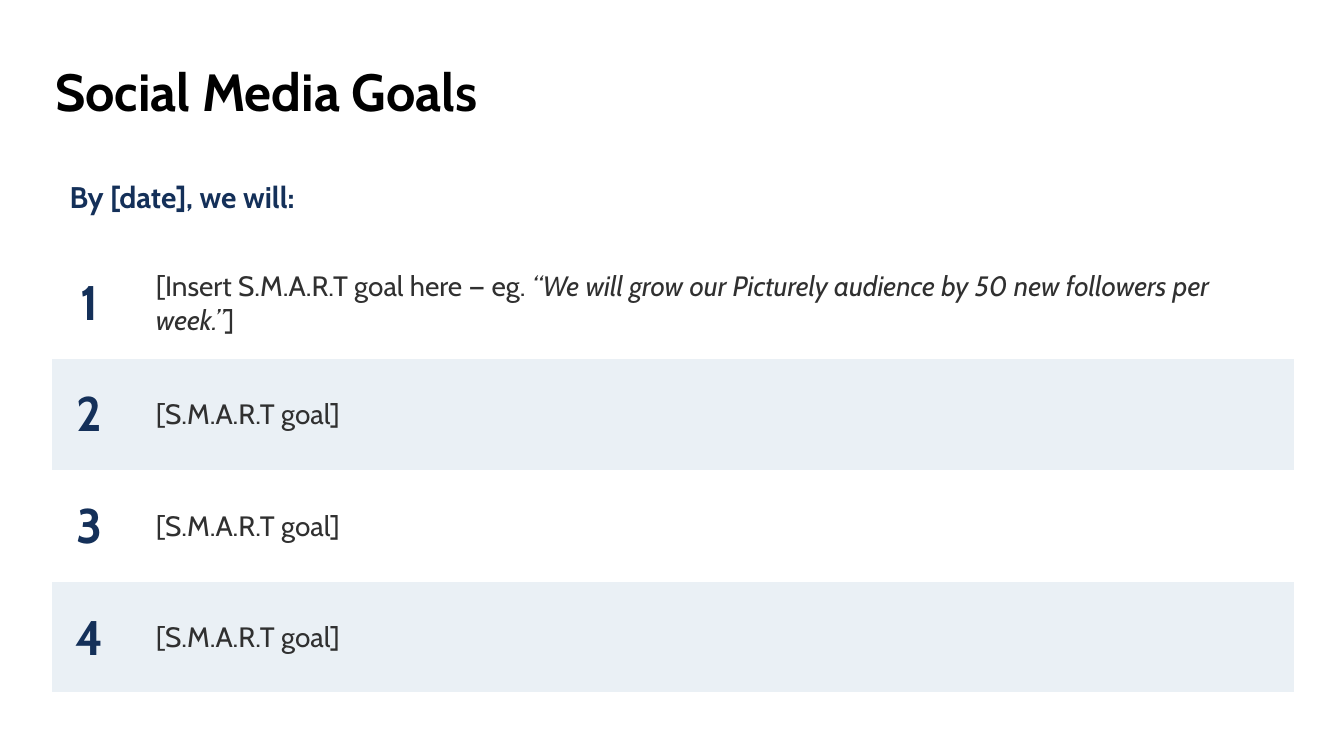
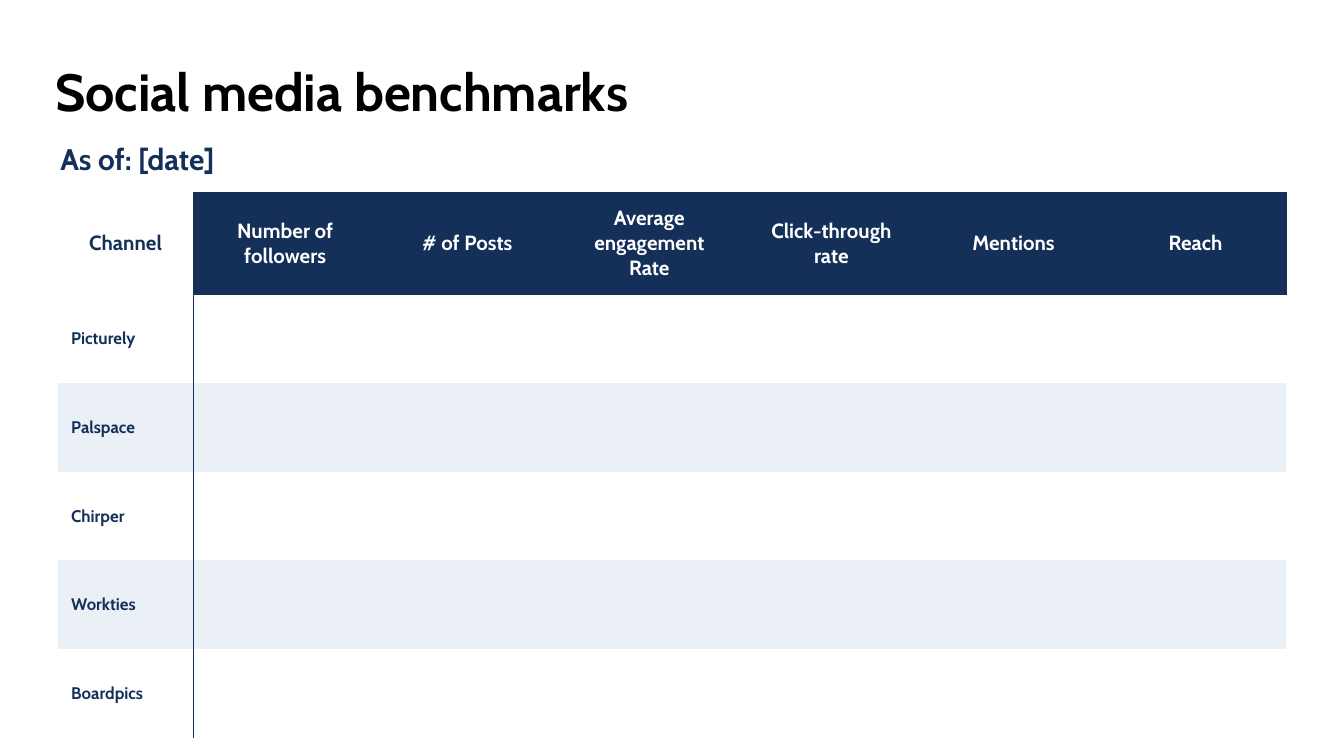
"""Build the social media goals and benchmarks slides."""
from dataclasses import dataclass

from lxml.etree import SubElement
from pptx import Presentation
from pptx.dml.color import RGBColor
from pptx.enum.shapes import MSO_SHAPE
from pptx.enum.text import MSO_ANCHOR, MSO_AUTO_SIZE, PP_ALIGN
from pptx.oxml.ns import qn
from pptx.presentation import Presentation as Deck
from pptx.slide import Slide
from pptx.text.text import TextFrame
from pptx.util import Inches, Pt

NAVY = RGBColor(0x14, 0x30, 0x59)
CHARCOAL = RGBColor(0x30, 0x30, 0x30)
BLACK = RGBColor(0, 0, 0)
WHITE = RGBColor(0xFF, 0xFF, 0xFF)
BAND = RGBColor(0xEA, 0xF0, 0xF5)

FONT = "Cabin"
INSET = 0.1
PLAIN_TABLE_STYLE = "{2D5ABB26-0587-4C30-8999-92F81FD0307C}"
TITLE_ONLY_LAYOUT = 5

GOALS = [
    [("[Insert S.M.A.R.T goal here — eg. ", False),
     ("“We will grow our Picturely audience by 50 new followers per week.”", True),
     ("]", False)],
    *[[("[S.M.A.R.T goal]", False)]] * 3,
]
METRICS = ["Number of followers", "# of Posts", "Average engagement Rate",
           "Click-through rate", "Mentions", "Reach"]
CHANNELS = ["Picturely", "Palspace", "Chirper", "Workties", "Boardpics"]


@dataclass(frozen=True)
class TextStyle:
    """Look of one kind of text."""
    size: float
    color: RGBColor
    bold: bool = True
    align: PP_ALIGN = PP_ALIGN.LEFT
    spacing: float = 1.0
    left_inset: float = INSET


@dataclass(frozen=True)
class CellContent:
    """Runs, look, fill and bordered sides of one table cell."""
    runs: list[tuple[str, bool]]
    style: TextStyle
    fill: RGBColor | None = None
    sides: str = ""


@dataclass(frozen=True)
class Grid:
    """Place, sizes and border of one table."""
    left: float
    top: float
    columns: list[float]
    rows: list[float]
    border_color: RGBColor
    border_width: float


TITLE = TextStyle(28, BLACK, spacing=0.9, left_inset=0.06)
SUBTITLE = TextStyle(16, NAVY, spacing=1.2)
GOAL_NUMBER = TextStyle(26, NAVY, align=PP_ALIGN.CENTER)
GOAL_TEXT = TextStyle(15, CHARCOAL, bold=False, left_inset=0.2)
CORNER = TextStyle(11, NAVY, align=PP_ALIGN.CENTER)
METRIC = TextStyle(11, WHITE, align=PP_ALIGN.CENTER, left_inset=0.11)
CHANNEL = TextStyle(9, NAVY)

CHANNEL_WIDTH = 1.01
METRIC_WIDTH = (9.14 - CHANNEL_WIDTH) / len(METRICS)
GOAL_GRID = Grid(0.37, 1.84, [0.59, 8.68], [0.83] * len(GOALS), WHITE, 2.25)
BENCHMARK_GRID = Grid(0.43, 1.43, [CHANNEL_WIDTH] + [METRIC_WIDTH] * len(METRICS),
                      [0.56] + [0.66] * len(CHANNELS), NAVY, 0.75)


def set_attributes(target: object, values: dict) -> None:
    """Apply each format value to the target."""
    for attribute, value in values.items():
        setattr(target, attribute, value)


def margins(style: TextStyle) -> dict:
    """Return the four insets that a style asks for."""
    return {"margin_left": Inches(style.left_inset), "margin_top": Inches(INSET),
            "margin_right": Inches(INSET), "margin_bottom": Inches(INSET)}


def write_runs(frame: TextFrame, runs: list[tuple[str, bool]], style: TextStyle) -> None:
    """Write runs with optional italics into the first paragraph."""
    line = frame.paragraphs[0]
    set_attributes(line, {"alignment": style.align, "line_spacing": style.spacing})
    for wording, italic in runs:
        run = line.add_run()
        run.text = wording
        set_attributes(run.font, {"name": FONT, "size": Pt(style.size),
                                  "bold": style.bold, "italic": italic})
        run.font.color.rgb = style.color


def write_box(frame: TextFrame, wording: str, style: TextStyle) -> None:
    """Fill a free-standing text frame with one line."""
    set_attributes(frame, {**margins(style), "word_wrap": True,
                           "auto_size": MSO_AUTO_SIZE.NONE,
                           "vertical_anchor": MSO_ANCHOR.TOP})
    write_runs(frame, [(wording, False)], style)


def add_titled_slide(deck: Deck, heading: str) -> Slide:
    """Add a slide with the shared title."""
    slide = deck.slides.add_slide(deck.slide_layouts[TITLE_ONLY_LAYOUT])
    title = slide.shapes.title
    set_attributes(title, {"left": Inches(0.35), "top": Inches(0.39),
                           "width": Inches(8.35), "height": Inches(0.59)})
    write_box(title.text_frame, heading, TITLE)
    return slide


def add_subtitle(slide: Slide, wording: str, left: float, top: float) -> None:
    """Add the dated line on its translucent white strip."""
    strip = slide.shapes.add_shape(MSO_SHAPE.RECTANGLE, Inches(left), Inches(top),
                                   Inches(9.09), Inches(0.53))
    strip.shadow.inherit = False
    strip.line.fill.background()
    strip.fill.solid()
    strip.fill.fore_color.rgb = WHITE
    white = next(strip.element.spPr.iter(qn("a:srgbClr")))
    SubElement(white, qn("a:alpha"), val="49000")
    write_box(strip.text_frame, wording, SUBTITLE)


def add_borders(properties, sides: str, grid: Grid) -> None:
    """Put drawn or empty edges ahead of the fill in the cell properties."""
    for position, side in enumerate("LRTB"):
        edge = SubElement(properties, qn(f"a:ln{side}"),
                          w=str(Pt(grid.border_width)))
        if side in sides:
            paint = SubElement(edge, qn("a:solidFill"))
            SubElement(paint, qn("a:srgbClr"), val=str(grid.border_color))
        else:
            SubElement(edge, qn("a:noFill"))
        properties.insert(position, edge)


def add_grid(slide: Slide, grid: Grid, contents: list[CellContent]) -> None:
    """Add a table and fill its cells row by row."""
    frame = slide.shapes.add_table(
        len(grid.rows), len(grid.columns), Inches(grid.left), Inches(grid.top),
        Inches(sum(grid.columns)), Inches(sum(grid.rows)))
    table = frame.table
    set_attributes(table, {"first_row": False, "horz_banding": False})
    next(frame.element.iter(qn("a:tableStyleId"))).text = PLAIN_TABLE_STYLE
    for column, width in zip(table.columns, grid.columns):
        column.width = Inches(width)
    for row, height in zip(table.rows, grid.rows):
        row.height = Inches(height)
    for cell, content in zip(table.iter_cells(), contents):
        set_attributes(cell, {**margins(content.style),
                              "vertical_anchor": MSO_ANCHOR.MIDDLE})
        if content.fill is None:
            cell.fill.background()
        else:
            cell.fill.solid()
            cell.fill.fore_color.rgb = content.fill
        write_runs(cell.text_frame, content.runs, content.style)
    for properties, content in zip(frame.element.iter(qn("a:tcPr")), contents):
        add_borders(properties, content.sides, grid)


def goal_cells() -> list[CellContent]:
    """Return numbered goals with bands on even rows."""
    cells = []
    for number, goal in enumerate(GOALS, start=1):
        banded = number % 2 == 0
        outer = {1: "T", len(GOALS): "B"}.get(number, "")
        cells += [
            CellContent([(str(number), False)], GOAL_NUMBER,
                        BAND if banded else None, "L" + outer),
            CellContent(goal, GOAL_TEXT, BAND if banded else WHITE, "R" + outer),
        ]
    return cells


def benchmark_cells() -> list[CellContent]:
    """Return the metric header and one empty row per channel."""
    cells = [CellContent([("Channel", False)], CORNER, sides="R")]
    cells += [CellContent([(metric, False)], METRIC, NAVY, "LRTB") for metric in METRICS]
    for index, channel in enumerate(CHANNELS):
        fill = BAND if index % 2 else WHITE
        top = "" if index else "T"
        cells.append(CellContent([(channel, False)], CHANNEL, fill, "R"))
        cells += [CellContent([], CHANNEL, fill, top + ("" if column else "L"))
                  for column in range(len(METRICS))]
    return cells


def main() -> None:
    """Build and save both slides."""
    deck = Presentation()
    set_attributes(deck, {"slide_width": Inches(10),
                          "slide_height": Inches(10) * 9 // 16})

    goals = add_titled_slide(deck, "Social Media Goals")
    add_subtitle(goals, "By [date], we will:", 0.42, 1.18)
    add_grid(goals, GOAL_GRID, goal_cells())

    benchmarks = add_titled_slide(deck, "Social media benchmarks")
    add_grid(benchmarks, BENCHMARK_GRID, benchmark_cells())
    add_subtitle(benchmarks, "As of: [date]", 0.35, 0.89)

    deck.save("out.pptx")


if __name__ == "__main__":
    main()
